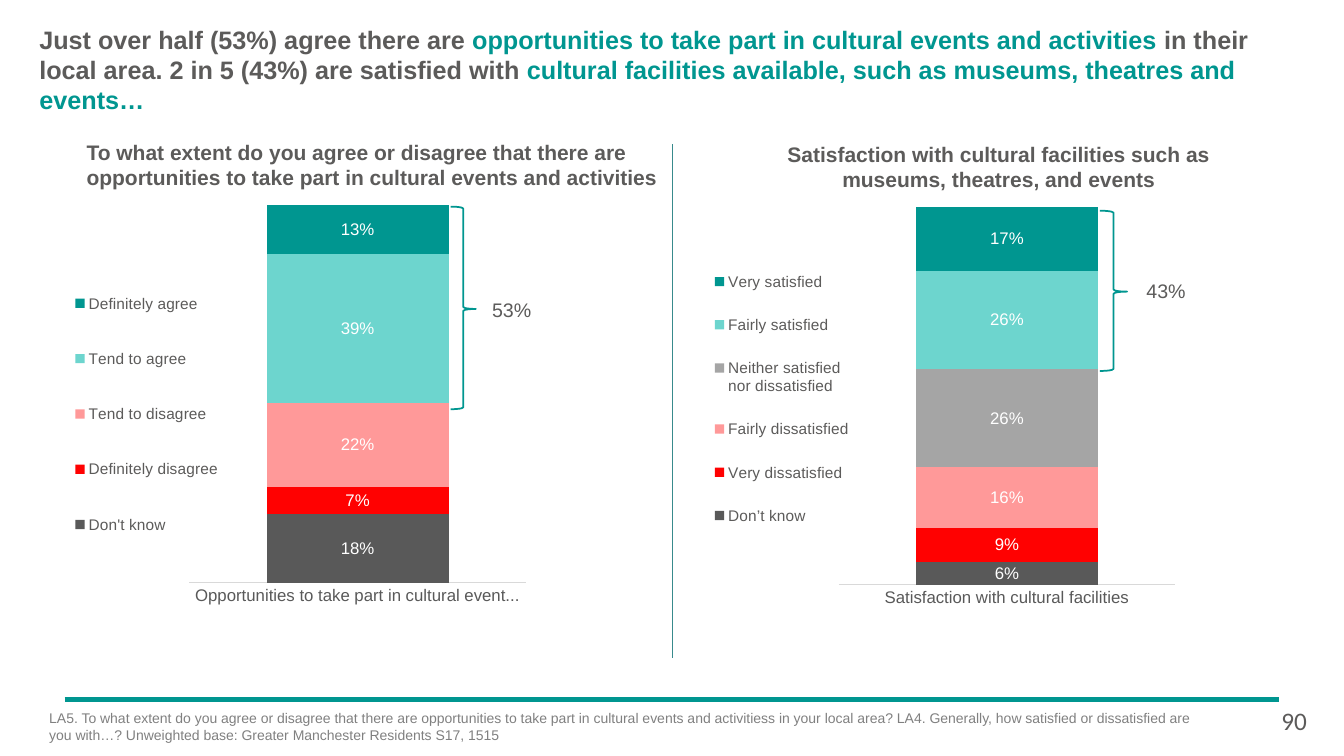
from dataclasses import dataclass

from lxml.etree import SubElement
from pptx import Presentation
from pptx.chart.data import CategoryChartData
from pptx.dml.color import RGBColor
from pptx.enum.chart import XL_CHART_TYPE as ChartType
from pptx.enum.chart import XL_LABEL_POSITION as LabelPosition
from pptx.enum.chart import XL_LEGEND_POSITION as LegendPosition
from pptx.enum.chart import XL_TICK_MARK as TickMark
from pptx.enum.shapes import MSO_CONNECTOR as Connector
from pptx.enum.shapes import MSO_SHAPE as Preset
from pptx.enum.text import MSO_ANCHOR as Anchor
from pptx.enum.text import PP_ALIGN as Align
from pptx.oxml.ns import qn
from pptx.util import Pt


@dataclass(frozen=True)
class Theme:
    font: str = "Arial"
    number_font: str = "Calibri"
    ink: str = "5C5B5A"
    teal: str = "009690"
    mint: str = "6DD5CE"
    neutral: str = "A5A5A5"
    pink: str = "FF9999"
    red: str = "FF0101"
    charcoal: str = "595959"
    axis: str = "D9D9D9"
    divider: str = "388A8C"
    note: str = "808080"
    white: str = "FFFFFF"
    title_size: int = 18
    heading_size: int = 15
    total_size: int = 14
    label_size: int = 12
    legend_size: int = 11
    note_size: int = 10


THEME = Theme()
PX = 9144  # 100 px to the inch

# Content: boxes are (left, top, width, height) in px
TITLE = [
    ("Just over half (53%) agree there are ", THEME.ink),
    ("opportunities to take part in cultural events and activities ", THEME.teal),
    ("in their local area. 2 in 5 (43%) are satisfied with ", THEME.ink),
    ("cultural facilities available, such as museums, theatres and events…", THEME.teal),
]
PANELS = [
    {
        "heading": "To what extent do you agree or disagree that there are "
                   "opportunities to take part in cultural events and activities",
        "heading_box": (76, 133, 591, 61),
        "align": Align.LEFT,
        "chart_box": (61, 128, 470, 577),
        "legend_layout": (0.02, 0.22, 0.32, 0.54),
        "category": "Opportunities to take part in cultural events and activities",
        "series": [
            ("Don't know", 0.18, THEME.charcoal),
            ("Definitely disagree", 0.07, THEME.red),
            ("Tend to disagree", 0.22, THEME.pink),
            ("Tend to agree", 0.39, THEME.mint),
            ("Definitely agree", 0.13, THEME.teal),
        ],
        "brace_box": (447, 205, 25, 201),
        "total": "53%",
        "total_box": (457, 291, 101, 34),
    },
    {
        "heading": "Satisfaction with cultural facilities such as museums, theatres, and events",
        "heading_box": (720, 135, 541, 61),
        "align": Align.CENTER,
        "chart_box": (705, 130, 470, 577),
        "legend_layout": (0, 0.2, 0.3, 0.52),
        "category": "Satisfaction with cultural facilities",
        "series": [
            ("Don’t know", 0.06, THEME.charcoal),
            ("Very dissatisfied", 0.09, THEME.red),
            ("Fairly dissatisfied", 0.16, THEME.pink),
            ("Neither satisfied nor dissatisfied", 0.26, THEME.neutral),
            ("Fairly satisfied", 0.26, THEME.mint),
            ("Very satisfied", 0.17, THEME.teal),
        ],
        "brace_box": (1091, 209, 27, 159),
        "total": "43%",
        "total_box": (1106, 272, 101, 34),
    },
]
PLOT_LAYOUT = (0.27, 0.13, 0.71, 0.65)
NOTE = ("LA5. To what extent do you agree or disagree that there are opportunities to take part "
        "in cultural events and activitiess in your local area? LA4. Generally, how satisfied or "
        "dissatisfied are you with…? Unweighted base: Greater Manchester Residents S17, 1515")
LINES = [  # start, end, colour, width in points
    ((64, 694), (1269, 694), THEME.teal, 3),
    ((667, 143), (667, 653), THEME.divider, 0.5),
]


def emu(lengths):
    return [length * PX for length in lengths]


def style(font, size, color, bold=False, name=THEME.font):
    font.name, font.size, font.bold = name, Pt(size), bold
    font.color.rgb = RGBColor.from_string(color)


def add_text(page, box, text, size, color, align=Align.LEFT, **extra):
    frame = page.shapes.add_textbox(*emu(box)).text_frame
    frame.word_wrap = True
    frame.text = text
    para = frame.paragraphs[0]
    para.alignment = align
    style(para.runs[0].font, size, color, **extra)


def add_line(page, start, end, color, width):
    line = page.shapes.add_connector(Connector.STRAIGHT, *emu(start + end))
    line.line.color.rgb = RGBColor.from_string(color)
    line.line.width = Pt(width)
    SubElement(line.element.spPr, qn("a:effectLst"))


def add_brace(page, box):
    brace = page.shapes.add_shape(Preset.RIGHT_BRACE, *emu(box))
    brace.shadow.inherit = False
    brace.fill.background()
    brace.line.color.rgb = RGBColor.from_string(THEME.teal)
    brace.line.width = Pt(1.25)
    brace.adjustments[0], brace.adjustments[1] = 0.075, 0.505


def set_layout(parent, index, fractions, inner=False):
    for old in parent.findall(qn("c:layout")):
        parent.remove(old)
    layout = SubElement(parent, qn("c:layout"))
    parent.insert(index, layout)
    manual = SubElement(layout, qn("c:manualLayout"))
    entries = [("layoutTarget", "inner")] if inner else []
    entries += [("xMode", "edge"), ("yMode", "edge"), *zip("xywh", fractions)]
    for tag, value in entries:
        SubElement(manual, qn("c:" + tag)).set("val", str(value))


def add_stack(page, panel):
    data = CategoryChartData(number_format="0%")
    data.categories = [panel["category"]]
    for name, value, _ in panel["series"]:
        data.add_series(name, [value])
    chart = page.shapes.add_chart(
        ChartType.COLUMN_STACKED_100, *emu(panel["chart_box"]), data).chart
    chart.has_title = False
    chart.font.name, chart.font.size = THEME.font, Pt(THEME.note_size)

    # Axes
    chart.value_axis.has_major_gridlines = False
    chart.value_axis.visible = False
    axis = chart.category_axis
    axis.major_tick_mark = axis.minor_tick_mark = TickMark.NONE
    axis.format.line.color.rgb = RGBColor.from_string(THEME.axis)
    axis.format.line.width = Pt(0.75)
    style(axis.tick_labels.font, THEME.label_size, THEME.charcoal)

    # Segments
    plot = chart.plots[0]
    plot.gap_width, plot.overlap, plot.vary_by_categories = 85, 100, False
    for series, (_, _, color) in zip(plot.series, panel["series"]):
        series.format.fill.solid()
        series.format.fill.fore_color.rgb = RGBColor.from_string(color)
        labels = series.data_labels
        labels.show_value = True
        labels.position = LabelPosition.CENTER
        labels.number_format, labels.number_format_is_linked = "0%", False
        style(labels.font, THEME.label_size, THEME.white)

    # Legend and plot placement
    chart.has_legend = True
    legend = chart.legend
    legend.position, legend.include_in_layout = LegendPosition.LEFT, False
    style(legend.font, THEME.legend_size, THEME.ink)
    area = chart.element.find(".//" + qn("c:plotArea"))
    set_layout(area, 0, PLOT_LAYOUT, inner=True)
    set_layout(chart.element.find(".//" + qn("c:legend")), 1, panel["legend_layout"])


def main():
    deck = Presentation()
    deck.slide_width, deck.slide_height = emu((1333, 750))
    page = deck.slides.add_slide(deck.slide_layouts[5])

    # Title
    title = page.shapes.title
    title.left, title.top, title.width, title.height = emu((39, 24, 1256, 91))
    frame = title.text_frame
    frame.margin_left = frame.margin_top = frame.margin_right = frame.margin_bottom = 0
    frame.vertical_anchor, frame.word_wrap = Anchor.TOP, True
    para = frame.paragraphs[0]
    para.alignment = Align.LEFT
    for text, color in TITLE:
        span = para.add_run()
        span.text = text
        style(span.font, THEME.title_size, color, bold=True)

    # Rules and chart panels
    for line in LINES:
        add_line(page, *line)
    for panel in PANELS:
        add_stack(page, panel)
        add_text(page, panel["heading_box"], panel["heading"],
                 THEME.heading_size, THEME.ink, panel["align"], bold=True)
        add_brace(page, panel["brace_box"])
        add_text(page, panel["total_box"], panel["total"],
                 THEME.total_size, THEME.ink, Align.CENTER)

    # Footer
    add_text(page, (39, 699, 1160, 58), NOTE, THEME.note_size, THEME.note)
    add_text(page, (1261, 695, 53, 40), "90", THEME.title_size, THEME.ink,
             name=THEME.number_font)
    deck.save("out.pptx")


if __name__ == "__main__":
    main()
